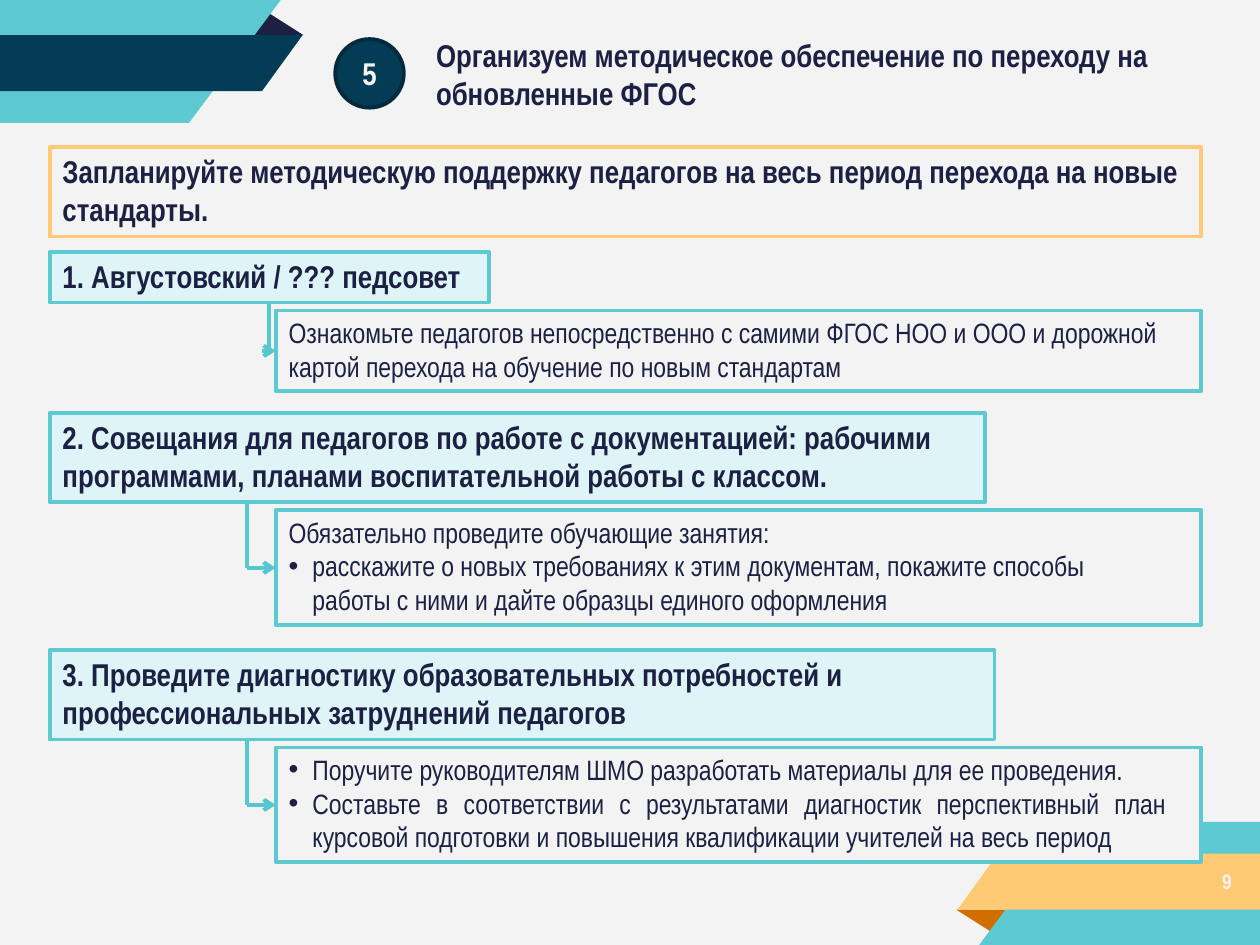
from lxml import etree
from pptx import Presentation
from pptx.dml.color import RGBColor
from pptx.enum.shapes import MSO_CONNECTOR, MSO_SHAPE
from pptx.enum.text import MSO_ANCHOR, MSO_AUTO_SIZE, PP_ALIGN
from pptx.oxml.ns import qn
from pptx.util import Cm, Pt

RECT, OVAL = MSO_SHAPE.RECTANGLE, MSO_SHAPE.OVAL
STRAIGHT = MSO_CONNECTOR.STRAIGHT
TOP, MIDDLE = MSO_ANCHOR.TOP, MSO_ANCHOR.MIDDLE
LEFT, CENTER, JUSTIFY = PP_ALIGN.LEFT, PP_ALIGN.CENTER, PP_ALIGN.JUSTIFY
NO_FIT = MSO_AUTO_SIZE.NONE

FONT = "Arial Narrow"
COLORS = {
    "paper": "F3F3F3", "ink": "1C2043", "teal": "5DC9D1", "pale": "DFF4F6",
    "navy": "043C56", "ring": "032A3D", "amber": "FFCA73", "rust": "D26E00",
    "arrow": "57C7CF",
}
WIDTH, HEIGHT = 25.4, 19.05
EDGE, CARD_LEFT, RIGHT = 1, 5.56, 24.22
GAP = 0.16

TITLE = ["Организуем методическое обеспечение по переходу на", "обновленные ФГОС"]
BANNER = ["Запланируйте методическую поддержку педагогов на весь период "
          "перехода на новые стандарты."]
STEPS = [
    {"top": 5.08, "width": 8.86, "height": 1.02, "card": 1.63, "stem": 5.42,
     "head": ["1. Августовский / ??? педсовет"],
     "body": [("Ознакомьте педагогов непосредственно с самими ФГОС НОО и ООО и дорожной "
               "картой перехода на обучение по новым стандартам", False, LEFT)]},
    {"top": 8.33, "width": 18.85, "height": 1.8, "card": 2.31, "stem": 4.97,
     "head": ["2. Совещания для педагогов по работе с документацией: рабочими",
              "программами, планами воспитательной работы с классом."],
     "body": [("Обязательно проведите обучающие занятия:", False, LEFT),
              ("расскажите о новых требованиях к этим документам, покажите способы работы "
               "с ними и дайте образцы единого оформления", True, LEFT)]},
    {"top": 13.11, "width": 19.05, "height": 1.8, "card": 2.31, "stem": 4.97,
     "head": ["3. Проведите диагностику образовательных потребностей и "
              "профессиональных затруднений педагогов"],
     "body": [("Поручите руководителям ШМО разработать материалы для ее проведения.",
               True, LEFT),
              ("Составьте в соответствии с результатами диагностик перспективный план "
               "курсовой подготовки и повышения квалификации учителей на весь период",
               True, JUSTIFY)]},
]
RIBBONS = [
    ([(5.38, 0.24), (5.03, 0.71), (6.12, 0.71)], "ink", "rust"),
    ([(0, 0), (5.66, 0), (3.81, 2.48), (0, 2.48)], "teal", "teal"),
    ([(0, 0.71), (6.1, 0.71), (5.28, 1.84), (0, 1.84)], "navy", "amber"),
]


def rgb(name):
    return RGBColor.from_string(COLORS[name])


def add_polygon(shapes, points, color):
    pts = [(Cm(x), Cm(y)) for x, y in points]
    builder = shapes.build_freeform(*pts[0], scale=1.0)
    builder.add_line_segments(pts[1:], close=True)
    sp = builder.convert_to_shape()
    sp.shadow.inherit = False
    sp.fill.solid()
    sp.fill.fore_color.rgb = rgb(color)
    sp.line.fill.background()


def add_box(shapes, kind, left, top, width, height, fill, line):
    sp = shapes.add_shape(kind, Cm(left), Cm(top), Cm(width), Cm(height))
    sp.shadow.inherit = False
    sp.fill.solid()
    sp.fill.fore_color.rgb = rgb(fill)
    sp.line.color.rgb = rgb(line)
    sp.line.width = Pt(2.25)
    return sp


def set_frame(sp, inset=0.0, anchor=TOP):
    tf = sp.text_frame
    tf.word_wrap = True
    tf.auto_size = NO_FIT
    tf.vertical_anchor = anchor
    tf.margin_left = tf.margin_right = tf.margin_bottom = 0
    tf.margin_top = Cm(inset)
    return tf


def add_paragraph(tf, index, text, size, bold=True, color="ink", align=LEFT,
                  indent=0.0, bullet=False, before=0.0):
    p = tf.paragraphs[0] if index == 0 else tf.add_paragraph()
    p.alignment = align
    p.space_before = Pt(before if index == 0 else 0)
    pPr = p._p.get_or_add_pPr()
    pPr.set("marL", str(Cm(0.74 if bullet else indent)))
    pPr.set("indent", str(Cm(-0.48 if bullet else 0)))
    if bullet:
        pPr.set("marR", str(Cm(0.7)))
        etree.SubElement(pPr, qn("a:buFont")).set("typeface", "Arial")
        etree.SubElement(pPr, qn("a:buChar")).set("char", "•")
    else:
        etree.SubElement(pPr, qn("a:buNone"))
    r = p.add_run()
    r.text = text
    r.font.name = FONT
    r.font.size = Pt(size)
    r.font.bold = bold
    r.font.color.rgb = rgb(color)


def add_heading(shapes, top, width, height, fill, line, lines):
    sp = add_box(shapes, RECT, EDGE, top, width, height, fill, line)
    tf = set_frame(sp, 0.1)
    for i, text in enumerate(lines):
        add_paragraph(tf, i, text, 18, indent=0.26, before=3.2)


def add_line(shapes, x1, y1, x2, y2):
    cxn = shapes.add_connector(STRAIGHT, Cm(x1), Cm(y1), Cm(x2), Cm(y2))
    cxn.line.color.rgb = rgb("arrow")
    cxn.line.width = Pt(2.25)
    etree.SubElement(cxn._element.spPr, qn("a:effectLst"))
    return cxn


def add_step(shapes, step):
    bottom = step["top"] + step["height"]
    card_top = bottom + GAP
    middle = card_top + step["card"] / 2
    add_heading(shapes, step["top"], step["width"], step["height"],
                "pale", "teal", step["head"])
    card = add_box(shapes, RECT, CARD_LEFT, card_top, RIGHT - CARD_LEFT, step["card"],
                   "paper", "teal")
    tf = set_frame(card, 0.1)
    for i, (text, bullet, align) in enumerate(step["body"]):
        add_paragraph(tf, i, text, 16, bold=False, align=align, indent=0.26,
                      bullet=bullet, before=3.1)
    add_line(shapes, step["stem"], bottom, step["stem"], middle)
    arrow = add_line(shapes, step["stem"], middle, CARD_LEFT, middle)
    arrow.end_connect(card, 1)
    tail = etree.SubElement(arrow.line._get_or_add_ln(), qn("a:tailEnd"))
    for key, value in (("type", "arrow"), ("w", "med"), ("len", "med")):
        tail.set(key, value)


def main():
    prs = Presentation()
    prs.slide_width, prs.slide_height = Cm(WIDTH), Cm(HEIGHT)
    s = prs.slides.add_slide(prs.slide_layouts[5])
    s.background.fill.solid()
    s.background.fill.fore_color.rgb = rgb("paper")
    shapes = s.shapes

    for points, top_color, bottom_color in RIBBONS:
        add_polygon(shapes, points, top_color)
        add_polygon(shapes, [(WIDTH - x, HEIGHT - y) for x, y in points], bottom_color)

    title = shapes.title
    title.left, title.top, title.width, title.height = Cm(2.08), Cm(0.69), Cm(21.26), Cm(1.6)
    tf = set_frame(title, 0.03)
    for i, text in enumerate(TITLE):
        add_paragraph(tf, i, text, 18, indent=6.71, before=1)

    badge = add_box(shapes, OVAL, 6.76, 0.79, 1.38, 1.38, "navy", "ring")
    add_paragraph(set_frame(badge, anchor=MIDDLE), 0, "5", 18, color="paper", align=CENTER)

    add_heading(shapes, 2.97, RIGHT - EDGE, 1.8, "paper", "amber", BANNER)
    for step in STEPS:
        add_step(shapes, step)

    number = shapes.add_textbox(Cm(24.54), Cm(17.5), Cm(0.64), Cm(0.56))
    add_paragraph(set_frame(number), 0, "9", 12, color="paper", indent=0.1)

    prs.save("out.pptx")


if __name__ == "__main__":
    main()
